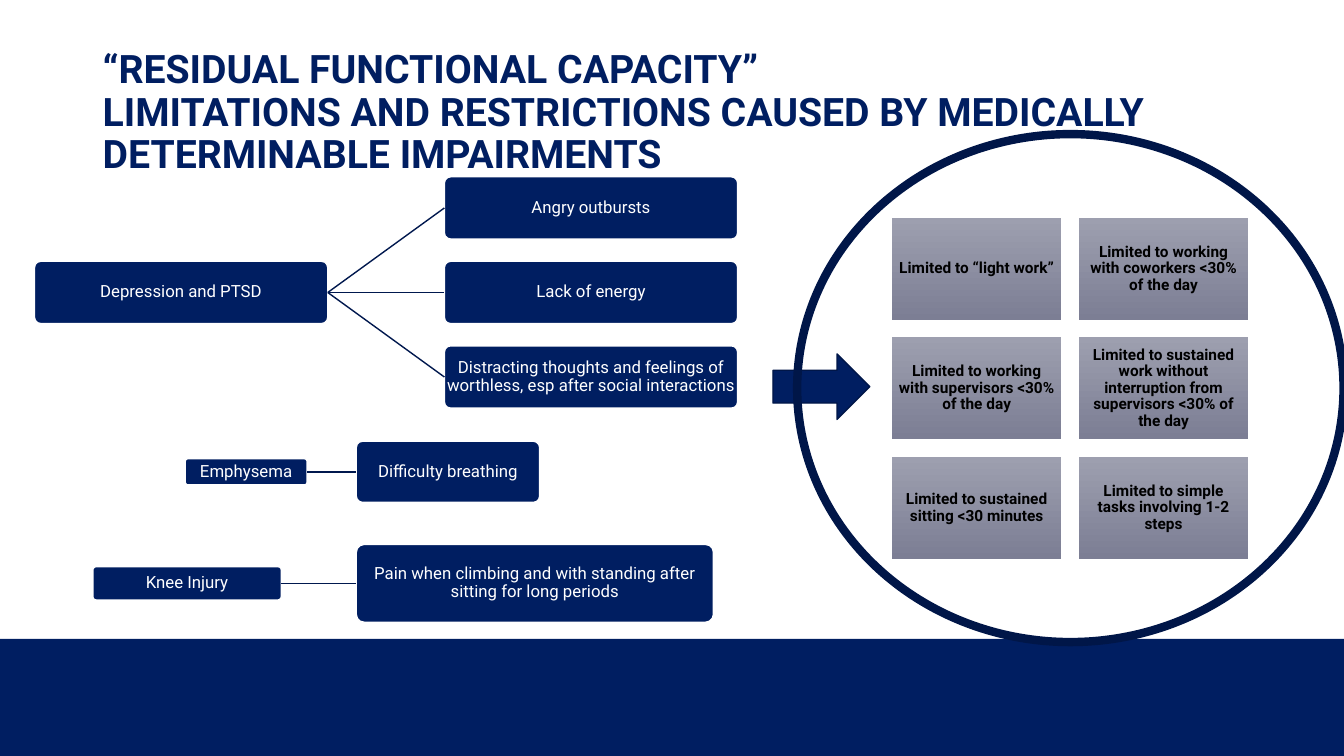
from pptx import Presentation
from pptx.dml.color import RGBColor
from pptx.enum.shapes import MSO_CONNECTOR, MSO_SHAPE
from pptx.enum.text import MSO_ANCHOR, PP_ALIGN
from pptx.oxml.ns import qn
from pptx.util import Cm, Pt
from lxml import etree

NAVY = RGBColor(0x00, 0x1E, 0x61)
DEEP_NAVY = RGBColor(0x00, 0x16, 0x48)
LINK_NAVY = RGBColor(0x00, 0x18, 0x4E)
CARD_TOP = RGBColor(0x9D, 0x9F, 0xAF)
CARD_BOTTOM = RGBColor(0x7C, 0x7E, 0x94)
WHITE = RGBColor(0xFF, 0xFF, 0xFF)
BLACK = RGBColor(0x00, 0x00, 0x00)

RECTANGLE = MSO_SHAPE.RECTANGLE
ROUNDED = MSO_SHAPE.ROUNDED_RECTANGLE
ARROW = MSO_SHAPE.RIGHT_ARROW
OVAL = MSO_SHAPE.OVAL
STRAIGHT = MSO_CONNECTOR.STRAIGHT
MIDDLE = MSO_ANCHOR.MIDDLE
LEFT, CENTER = PP_ALIGN.LEFT, PP_ALIGN.CENTER
LEFT_SIDE, RIGHT_SIDE = 1, 3

SLIDE_WIDTH, SLIDE_HEIGHT = 33.87, 19.05
TITLE = ("“RESIDUAL FUNCTIONAL CAPACITY”\v"
         "LIMITATIONS AND RESTRICTIONS CAUSED BY MEDICALLY DETERMINABLE IMPAIRMENTS")
EFFECT_STEP = 2.13
LIMITATIONS = [
    "Limited to “light work”",
    "Limited to working with coworkers <30% of the day",
    "Limited to working with supervisors <30% of the day",
    "Limited to sustained work without interruption from supervisors <30% of the day",
    "Limited to sustained sitting <30 minutes",
    "Limited to simple tasks involving 1-2 steps",
]


def write(holder, text, size=12, color=WHITE, bold=False, align=CENTER, margins=(0, 0)):
    frame = holder.text_frame
    frame.word_wrap = True
    frame.vertical_anchor = MIDDLE
    frame.margin_left = frame.margin_right = Cm(margins[0])
    frame.margin_top = frame.margin_bottom = Cm(margins[1])
    paragraph = frame.paragraphs[0]
    paragraph.text = text
    paragraph.alignment = align
    paragraph.line_spacing = 0.9
    font = paragraph.font
    font.name, font.size, font.bold = "Roboto", Pt(size), bold
    font.color.rgb = color


def add_block(slide, kind, left, top, width, height, fill=None, line=None, line_width=1):
    block = slide.shapes.add_shape(kind, Cm(left), Cm(top), Cm(width), Cm(height))
    block.shadow.inherit = False
    if fill is None:
        block.fill.background()
    else:
        block.fill.solid()
        block.fill.fore_color.rgb = fill
    if line is None:
        block.line.fill.background()
    else:
        block.line.color.rgb = line
        block.line.width = Pt(line_width)
    return block


def add_label(slide, text, left, middle, width, height):
    label = add_block(slide, ROUNDED, left, middle - height / 2, width, height, NAVY, WHITE)
    label.adjustments[0] = 0.1
    write(label, text)
    return label


def link(slide, cause, effect):
    branch = slide.shapes.add_connector(STRAIGHT, 0, 0, 0, 0)
    branch.begin_connect(cause, RIGHT_SIDE)
    branch.end_connect(effect, LEFT_SIDE)
    branch.line.color.rgb = LINK_NAVY
    branch.line.width = Pt(1)
    etree.SubElement(branch.element.spPr, qn("a:effectLst"))


def add_impairment(slide, left, middle, impairment, size, effects_left, effect_size, effects):
    cause = add_label(slide, impairment, left, middle, *size)
    first = middle - EFFECT_STEP * (len(effects) - 1) / 2
    for index, text in enumerate(effects):
        effect = add_label(slide, text, effects_left, first + index * EFFECT_STEP, *effect_size)
        link(slide, cause, effect)


def add_title(slide, left, top, width, height):
    title = slide.shapes.add_textbox(Cm(left), Cm(top), Cm(width), Cm(height))
    write(title, TITLE, size=28, color=NAVY, bold=True, align=LEFT, margins=(0.25, 0.13))


def add_capacity(slide, left, top, width, height):
    add_block(slide, OVAL, left, top, width, height, line=DEEP_NAVY, line_width=6)
    card_width, card_height, gap = 4.27, 2.57, 0.44
    for index, text in enumerate(LIMITATIONS):
        row, column = divmod(index, 2)
        card = add_block(slide, RECTANGLE,
                         left + 2.39 + column * (card_width + gap),
                         top + 2.11 + row * (card_height + gap),
                         card_width, card_height, CARD_TOP)
        card.fill.gradient()
        card.fill.gradient_angle = 270
        for stop, color in zip(card.fill.gradient_stops, (CARD_TOP, CARD_BOTTOM)):
            stop.color.rgb = color
        write(card, text, size=11, color=BLACK, bold=True, margins=(0.13, 0.13))


def main():
    deck = Presentation()
    deck.slide_width, deck.slide_height = Cm(SLIDE_WIDTH), Cm(SLIDE_HEIGHT)
    slide = deck.slides.add_slide(deck.slide_layouts[6])
    add_block(slide, RECTANGLE, 0, 16.1, SLIDE_WIDTH, SLIDE_HEIGHT - 16.1, NAVY)
    add_title(slide, 2.34, 1.02, 29.21, 3.68)
    add_impairment(slide, 0.87, 7.37, "Depression and PTSD", (7.39, 1.57), 11.2, (7.39, 1.57), [
        "Angry outbursts",
        "Lack of energy",
        "Distracting thoughts and feelings of worthless, esp after social interactions",
    ])
    add_impairment(slide, 4.67, 11.89, "Emphysema", (3.07, 0.66), 8.98, (4.62, 1.54),
                   ["Difficulty breathing"])
    add_impairment(slide, 2.34, 14.7, "Knee Injury", (4.75, 0.84), 8.98, (9, 1.96),
                   ["Pain when climbing and with standing after sitting for long periods"])
    add_block(slide, ARROW, 19.48, 8.92, 2.44, 1.65, NAVY, DEEP_NAVY)
    add_capacity(slide, 20.09, 3.38, 13.77, 12.8)
    deck.save("out.pptx")


if __name__ == "__main__":
    main()
